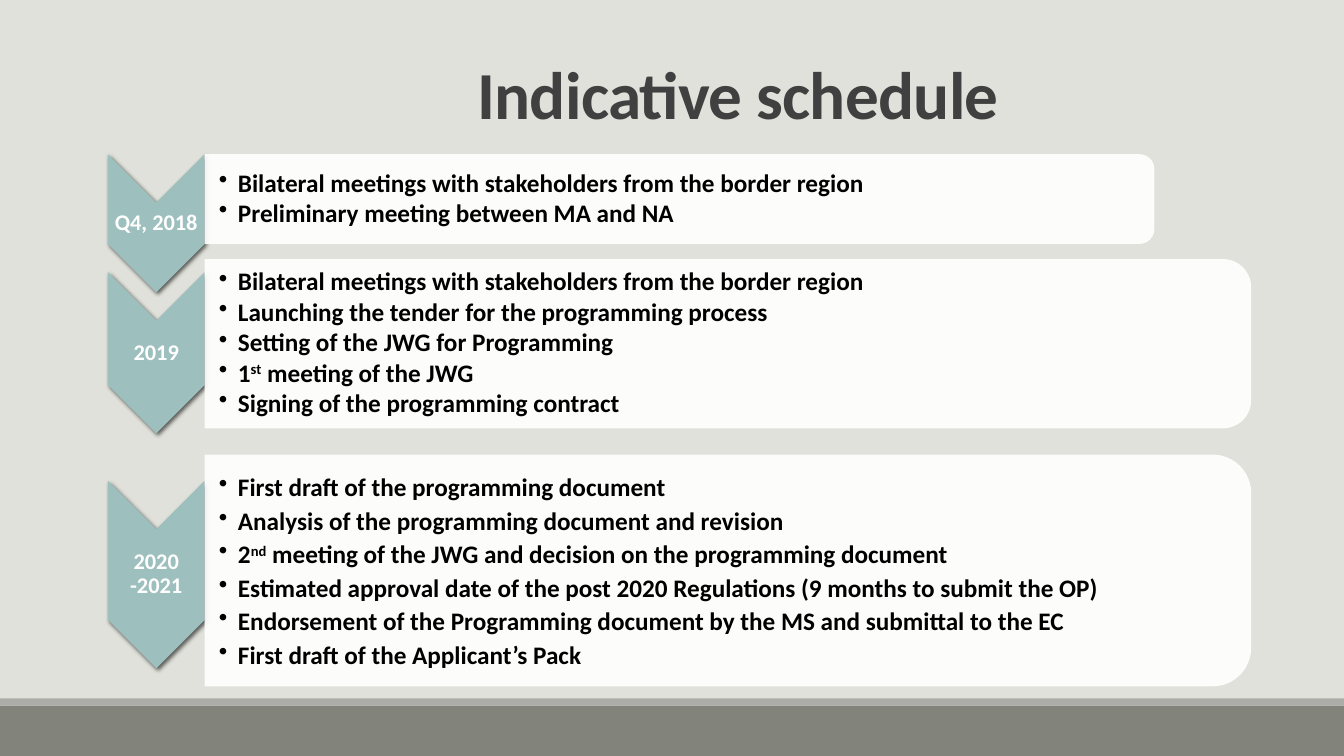
from lxml.etree import SubElement
from pptx import Presentation
from pptx.dml.color import RGBColor
from pptx.enum.shapes import MSO_SHAPE
from pptx.enum.text import MSO_ANCHOR, MSO_AUTO_SIZE, PP_ALIGN
from pptx.oxml import parse_xml
from pptx.oxml.ns import nsdecls, qn
from pptx.util import Inches, Pt

LEFT = 1.07
CHEVRON_W = 0.96
PANEL_X = 2.03

PERIODS = [
    {"label": "Q4, 2018", "chevron": (1.53, 1.37), "panel": (1.53, 9.42, 0.89), "spacing": 0.9,
     "items": ["Bilateral meetings with stakeholders from the border region",
               "Preliminary meeting between MA and NA"]},
    {"label": "2019", "chevron": (2.7, 1.6), "panel": (2.57, 10.38, 1.68), "spacing": 0.9,
     "items": ["Bilateral meetings with stakeholders from the border region",
               "Launching the tender for the programming process",
               "Setting of the JWG for Programming",
               "1^st^ meeting of the JWG",
               "Signing of the programming contract"]},
    {"label": "2020 -2021", "chevron": (4.77, 1.86), "panel": (4.51, 10.38, 2.3), "spacing": 1.0,
     "items": ["First draft of the programming document",
               "Analysis of the programming document and revision",
               "2^nd^ meeting of the JWG and decision on the programming document",
               "Estimated approval date of the post 2020 Regulations (9 months to submit the OP)",
               "Endorsement of the Programming document by the MS and submittal to the EC",
               "First draft of the Applicant’s Pack"]},
]


def rgb(value):
    return RGBColor.from_string(value)


class ScheduleSlide:
    font = "Calibri"
    background = "E1E1DB"
    teal = "9DBFBE"
    white = "FFFFFF"
    black = "000000"
    grey = "404040"

    def __init__(self, prs):
        self.s = prs.slides.add_slide(prs.slide_layouts[5])
        fill = self.s.background.fill
        fill.solid()
        fill.fore_color.rgb = rgb(self.background)

    def style(self, r, size, color):
        r.font.name = self.font
        r.font.size = Pt(size)
        r.font.bold = True
        r.font.color.rgb = rgb(color)

    def shape(self, kind, x, y, w, h, color, turned=False):
        if turned:
            x, y, w, h = x + (w - h) / 2, y + (h - w) / 2, h, w
        sp = self.s.shapes.add_shape(kind, Inches(x), Inches(y), Inches(w), Inches(h))
        sp.rotation = 90 if turned else 0
        sp.shadow.inherit = False
        sp.fill.solid()
        sp.fill.fore_color.rgb = rgb(color)
        sp.line.fill.background()
        return sp

    def title(self, text):
        sp = self.s.shapes.title
        sp.left, sp.top, sp.width, sp.height = Inches(1.82), Inches(0.28), Inches(11), Inches(1.09)
        tf = sp.text_frame
        tf.text = text
        tf.auto_size = MSO_AUTO_SIZE.NONE
        tf.vertical_anchor = MSO_ANCHOR.BOTTOM
        p = tf.paragraphs[0]
        p.alignment = PP_ALIGN.CENTER
        p.line_spacing = 0.85
        self.style(p.runs[0], 48, self.grey)
        p.runs[0]._r.get_or_add_rPr().set("spc", "-50")

    def text_box(self, x, y, w, h, inset):
        sp = self.s.shapes.add_textbox(Inches(x), Inches(y), Inches(w), Inches(h))
        tf = sp.text_frame
        tf.word_wrap = True
        tf.vertical_anchor = MSO_ANCHOR.MIDDLE
        tf.margin_left = Inches(inset)
        tf.margin_top = tf.margin_right = tf.margin_bottom = Inches(0.01)
        return tf

    def chevron(self, y, h, label):
        sp = self.shape(MSO_SHAPE.CHEVRON, LEFT, y, CHEVRON_W, h, self.teal, turned=True)
        effects = sp._element.spPr.find(qn("a:effectLst"))
        effects.append(parse_xml(
            f'<a:outerShdw {nsdecls("a")} blurRad="38100" dist="25400" dir="2700000" '
            'rotWithShape="0"><a:srgbClr val="000000"><a:alpha val="60000"/>'
            '</a:srgbClr></a:outerShdw>'))
        tf = self.text_box(LEFT, y + CHEVRON_W / 2, CHEVRON_W, h - CHEVRON_W, 0.01)
        tf.text = label
        p = tf.paragraphs[0]
        p.alignment = PP_ALIGN.CENTER
        p.line_spacing = 0.9
        self.style(p.runs[0], 16, self.white)

    def panel(self, y, w, h, items, spacing):
        sp = self.shape(MSO_SHAPE.ROUND_2_SAME_RECTANGLE, PANEL_X, y, w, h, self.white, turned=True)
        color = sp._element.spPr.find(qn("a:solidFill"))[0]
        SubElement(color, qn("a:alpha")).set("val", "90000")
        corner = 0.05 * h
        tf = self.text_box(PANEL_X, y + corner, w - corner, h - 2 * corner, 0.14)
        for i, item in enumerate(items):
            p = tf.add_paragraph() if i else tf.paragraphs[0]
            self.bullet(p, item, spacing)

    def bullet(self, p, item, spacing):
        p.line_spacing = spacing
        p.space_after = Pt(2.3)
        pPr = p._p.get_or_add_pPr()
        pPr.set("marL", str(Inches(0.19)))
        pPr.set("indent", str(-Inches(0.19)))
        SubElement(pPr, qn("a:buChar")).set("char", "•")
        for i, part in enumerate(item.split("^")):
            r = p.add_run()
            r.text = part
            self.style(r, 18, self.black)
            if i % 2:
                r._r.get_or_add_rPr().set("baseline", "30000")


def main():
    prs = Presentation()
    prs.slide_width = Inches(13.33)
    prs.slide_height = Inches(7.5)
    slide = ScheduleSlide(prs)
    slide.shape(MSO_SHAPE.RECTANGLE, 0, 7, 13.33, 0.5, "82847C")
    slide.shape(MSO_SHAPE.RECTANGLE, 0, 6.93, 13.33, 0.07, "ACADA8")
    slide.title("Indicative schedule")
    for period in PERIODS:
        slide.chevron(*period["chevron"], period["label"])
        slide.panel(*period["panel"], period["items"], period["spacing"])
    prs.save("out.pptx")


if __name__ == "__main__":
    main()
